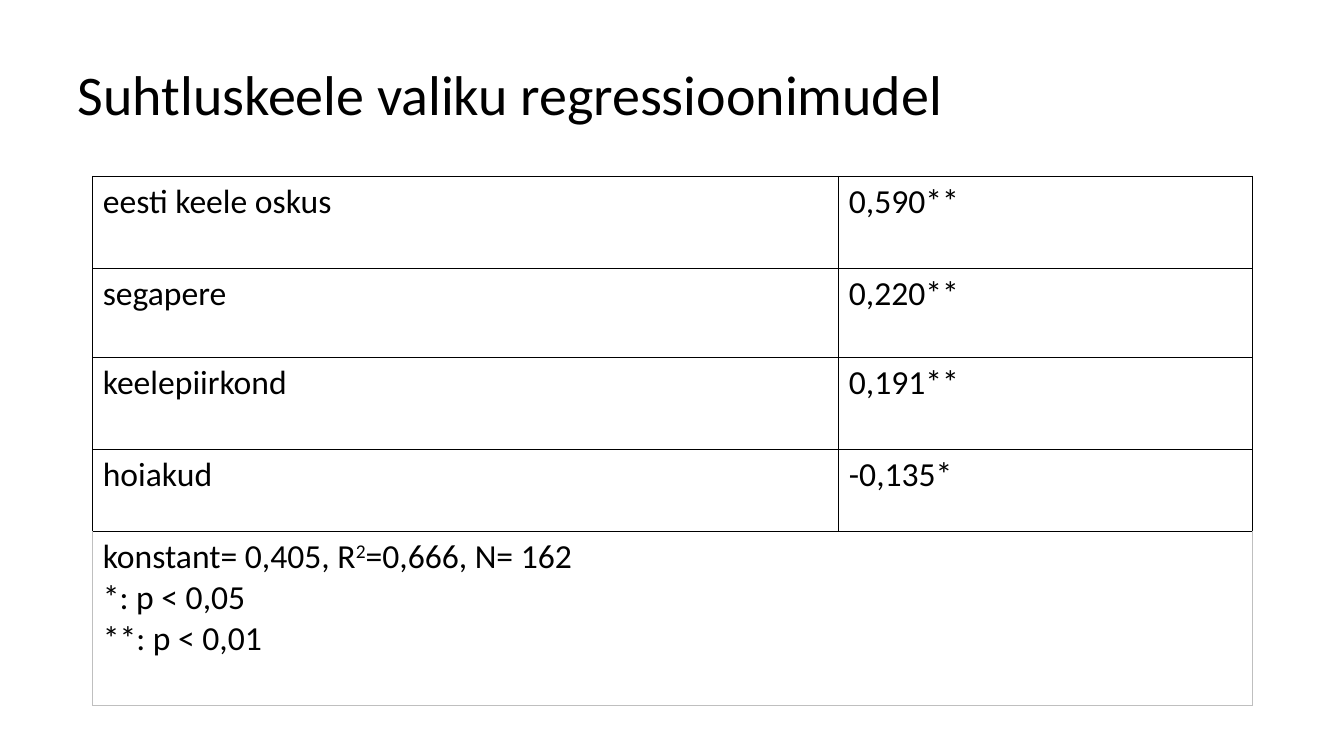
from dataclasses import dataclass

from lxml import etree
from pptx import Presentation
from pptx.dml.color import RGBColor
from pptx.enum.text import MSO_ANCHOR, PP_ALIGN
from pptx.oxml.ns import qn
from pptx.util import Inches, Pt

JUSTIFY = PP_ALIGN.JUSTIFY
LEFT = PP_ALIGN.LEFT
MIDDLE = MSO_ANCHOR.MIDDLE
TOP = MSO_ANCHOR.TOP
TITLE_ONLY = 5


@dataclass(frozen=True)
class Theme:
    font: str = "Calibri"
    ink: str = "000000"
    faint: str = "BFBFBF"
    title_size: int = 40
    body_size: int = 24
    rule_width: float = 1
    faint_width: float = 0.5


THEME = Theme()
TITLE = "Suhtluskeele valiku regressioonimudel"
PREDICTORS = [
    ("eesti keele oskus", "0,590**"),
    ("segapere", "0,220**"),
    ("keelepiirkond", "0,191**"),
    ("hoiakud", "-0,135*"),
]
MODEL_NOTES = [
    [("konstant= 0,405, R", False), ("2", True), ("=0,666, N= 162", False)],
    [("*: p < 0,05", False)],
    [("**: p < 0,01", False)],
]
COLUMN_WIDTHS = [7.4, 4.1]
ROW_HEIGHTS = [0.91, 0.89, 0.91, 0.81, 1.73]


def add_run(paragraph, text, size, superscript=False):
    run = paragraph.add_run()
    run.text = text
    run.font.name = THEME.font
    run.font.size = Pt(size)
    run.font.bold = False
    run.font.color.rgb = RGBColor.from_string(THEME.ink)
    if superscript:
        run.font._element.set("baseline", "30000")


def fill_cell(cell, lines):
    cell.vertical_anchor = TOP
    frame = cell.text_frame
    for index, line in enumerate(lines):
        paragraph = frame.add_paragraph() if index else frame.paragraphs[0]
        paragraph.alignment = LEFT
        for text, superscript in line:
            add_run(paragraph, text, THEME.body_size, superscript)


def style_cell(cell, faint_sides):
    properties = cell._tc.get_or_add_tcPr()
    for side in "LRTB":
        faint = side in faint_sides
        width = THEME.faint_width if faint else THEME.rule_width
        color = THEME.faint if faint else THEME.ink
        border = etree.SubElement(properties, qn(f"a:ln{side}"), w=str(Pt(width)))
        solid = etree.SubElement(border, qn("a:solidFill"))
        etree.SubElement(solid, qn("a:srgbClr"), val=color)
    cell.fill.background()


def add_title(slide, left, top, width, height):
    title = slide.shapes.title
    title.left, title.top = Inches(left), Inches(top)
    title.width, title.height = Inches(width), Inches(height)
    title.text_frame.vertical_anchor = MIDDLE
    paragraph = title.text_frame.paragraphs[0]
    paragraph.alignment = JUSTIFY
    add_run(paragraph, TITLE, THEME.title_size)


def add_regression_table(slide, left, top, width, height):
    model = slide.shapes.add_table(
        len(ROW_HEIGHTS), len(COLUMN_WIDTHS),
        Inches(left), Inches(top), Inches(width), Inches(height),
    ).table
    model.first_row = model.horz_banding = False
    for column, share in zip(model.columns, COLUMN_WIDTHS):
        column.width = Inches(width * share / sum(COLUMN_WIDTHS))
    for row, share in zip(model.rows, ROW_HEIGHTS):
        row.height = Inches(height * share / sum(ROW_HEIGHTS))

    notes_row = len(PREDICTORS)
    model.cell(notes_row, 0).merge(model.cell(notes_row, 1))
    for row_index, row in enumerate(model.rows):
        for cell in row.cells:
            style_cell(cell, "LRB" if row_index == notes_row else "")
    for row_index, predictor in enumerate(PREDICTORS):
        for column_index, text in enumerate(predictor):
            fill_cell(model.cell(row_index, column_index), [[(text, False)]])
    fill_cell(model.cell(notes_row, 0), MODEL_NOTES)


def main():
    deck = Presentation()
    deck.slide_width, deck.slide_height = Inches(13.33), Inches(7.5)
    slide = deck.slides.add_slide(deck.slide_layouts[TITLE_ONLY])
    add_title(slide, 0.67, 0.3, 12, 1.25)
    add_regression_table(slide, 0.92, 1.75, sum(COLUMN_WIDTHS), sum(ROW_HEIGHTS))
    deck.save("out.pptx")


if __name__ == "__main__":
    main()
